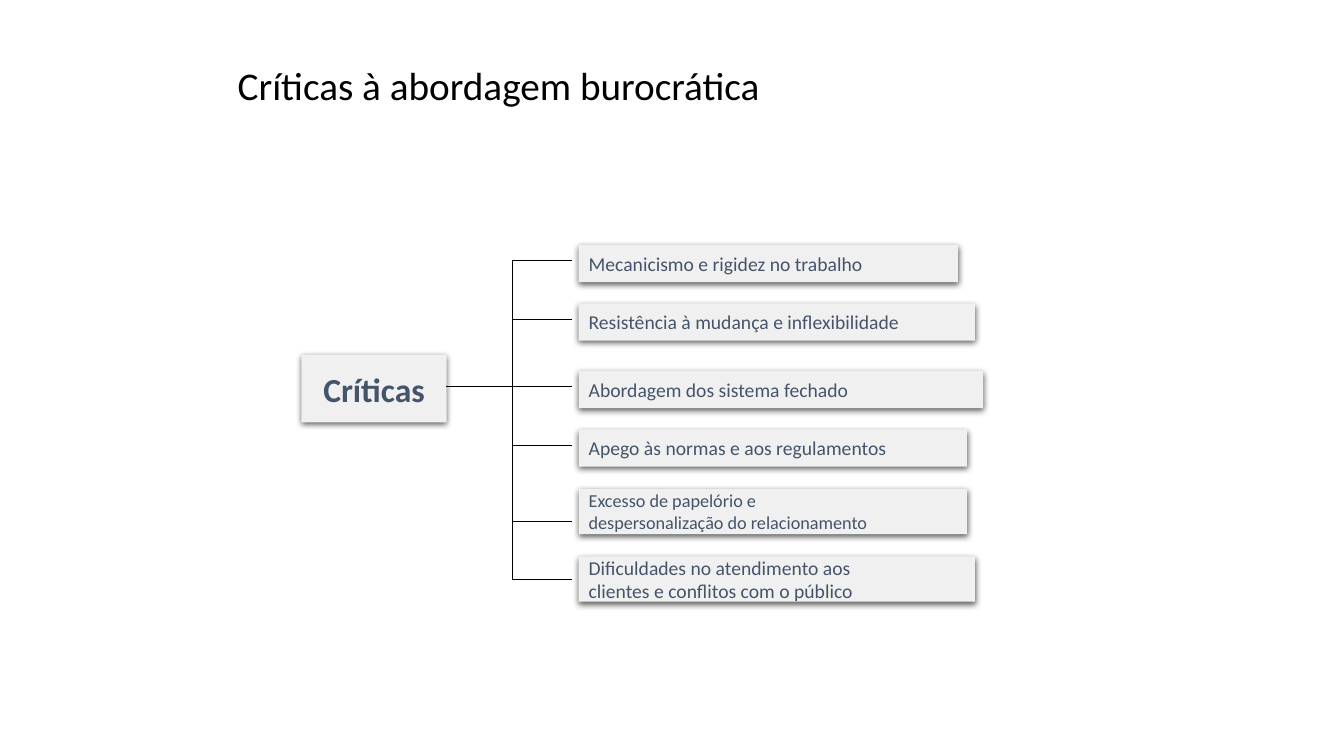
import lxml.etree
import pptx
import pptx.dml.color
import pptx.enum.shapes
import pptx.enum.text
import pptx.oxml.ns
import pptx.util

Inches, Pt = pptx.util.Inches, pptx.util.Pt
ALIGN = pptx.enum.text.PP_ALIGN
COLORS = {"ink": "000000", "slate": "44546A", "panel": "F1F0F0"}


def rgb(name):
    return pptx.dml.color.RGBColor.from_string(COLORS[name])


def effect_child(parent, tag, **attributes):
    return lxml.etree.SubElement(parent, pptx.oxml.ns.qn(tag), attributes)


class CriticismSlide:
    font_name = "Calibri"
    line_width = Pt(0.75)

    def __init__(self, deck):
        self.slide = deck.slides.add_slide(deck.slide_layouts[5])

    def fill_text(self, frame, lines, size, color, align=ALIGN.LEFT, bold=False, spacing=None):
        frame.vertical_anchor = pptx.enum.text.MSO_ANCHOR.MIDDLE
        font_format = {"name": self.font_name, "size": Pt(size), "bold": bold}
        for index, line in enumerate(lines):
            paragraph = frame.add_paragraph() if index else frame.paragraphs[0]
            paragraph.alignment = align
            paragraph.line_spacing = spacing
            run = paragraph.add_run()
            run.text = line
            for key, value in font_format.items():
                setattr(run.font, key, value)
            run.font.color.rgb = rgb(color)

    def title(self, wording, left, top, width, height):
        heading = self.slide.shapes.title
        place = {"left": left, "top": top, "width": width, "height": height}
        for key, value in place.items():
            setattr(heading, key, Inches(value))
        heading.text_frame.word_wrap = True
        self.fill_text(heading.text_frame, [wording], 28, "ink", spacing=0.9)

    def panel(self, lines, left, top, width, height, size, **style):
        panel = self.slide.shapes.add_shape(
            pptx.enum.shapes.MSO_SHAPE.RECTANGLE,
            Inches(left), Inches(top), Inches(width), Inches(height))
        panel.fill.solid()
        panel.fill.fore_color.rgb = rgb("panel")
        panel.line.fill.background()
        # Soft shadow straight below the panel
        panel.shadow.inherit = False
        effects = panel._element.spPr.find(pptx.oxml.ns.qn("a:effectLst"))
        shadow = effect_child(effects, "a:outerShdw", blurRad=str(Pt(4.5)),
                              dist=str(Pt(1.5)), dir="5400000", rotWithShape="0")
        shade = effect_child(shadow, "a:srgbClr", val=COLORS["ink"])
        effect_child(shade, "a:alpha", val="63000")
        panel.text_frame.word_wrap = False
        self.fill_text(panel.text_frame, lines, size, "slate", **style)

    def line(self, x1, y1, x2, y2):
        line = self.slide.shapes.add_connector(
            pptx.enum.shapes.MSO_CONNECTOR.STRAIGHT,
            Inches(x1), Inches(y1), Inches(x2), Inches(y2))
        line.line.color.rgb = rgb("ink")
        line.line.width = self.line_width
        effect_child(line._element.spPr, "a:effectLst")


# Lines of text, panel top, width, height, text size, branch height
CRITICISMS = [
    (["Mecanicismo e rigidez no trabalho"], 2.43, 3.76, 0.37, 14, 2.58),
    (["Resistência à mudança e inflexibilidade"], 3.01, 3.93, 0.37, 14, 3.17),
    (["Abordagem dos sistema fechado"], 3.68, 4.01, 0.37, 14, 3.83),
    (["Apego às normas e aos regulamentos"], 4.26, 3.85, 0.37, 14, 4.42),
    (["Excesso de papelório e", "despersonalização do relacionamento"],
     4.85, 3.85, 0.45, 13, 5.17),
    (["Dificuldades no atendimento aos", "clientes e conflitos com o público"],
     5.52, 3.93, 0.45, 14, 5.75),
]
TRUNK_X, BRANCH_END, PANEL_LEFT = 5.08, 5.67, 5.74


def main():
    deck = pptx.Presentation()
    deck.slide_width, deck.slide_height = Inches(13.33), Inches(7.5)
    page = CriticismSlide(deck)
    page.title(" Críticas à abordagem burocrática", 2.17, 0.32, 9, 1.1)

    # Root of the tree and its trunk
    page.panel(["Críticas"], 2.99, 3.52, 1.44, 0.67, 24, align=ALIGN.CENTER, bold=True)
    page.line(4.42, 3.83, TRUNK_X, 3.83)
    page.line(TRUNK_X, CRITICISMS[0][-1], TRUNK_X, CRITICISMS[-1][-1])

    # One branch and panel for each criticism
    for lines, top, width, height, size, branch_y in CRITICISMS:
        page.line(TRUNK_X, branch_y, BRANCH_END, branch_y)
        page.panel(lines, PANEL_LEFT, top, width, height, size)

    deck.save("out.pptx")


if __name__ == "__main__":
    main()
